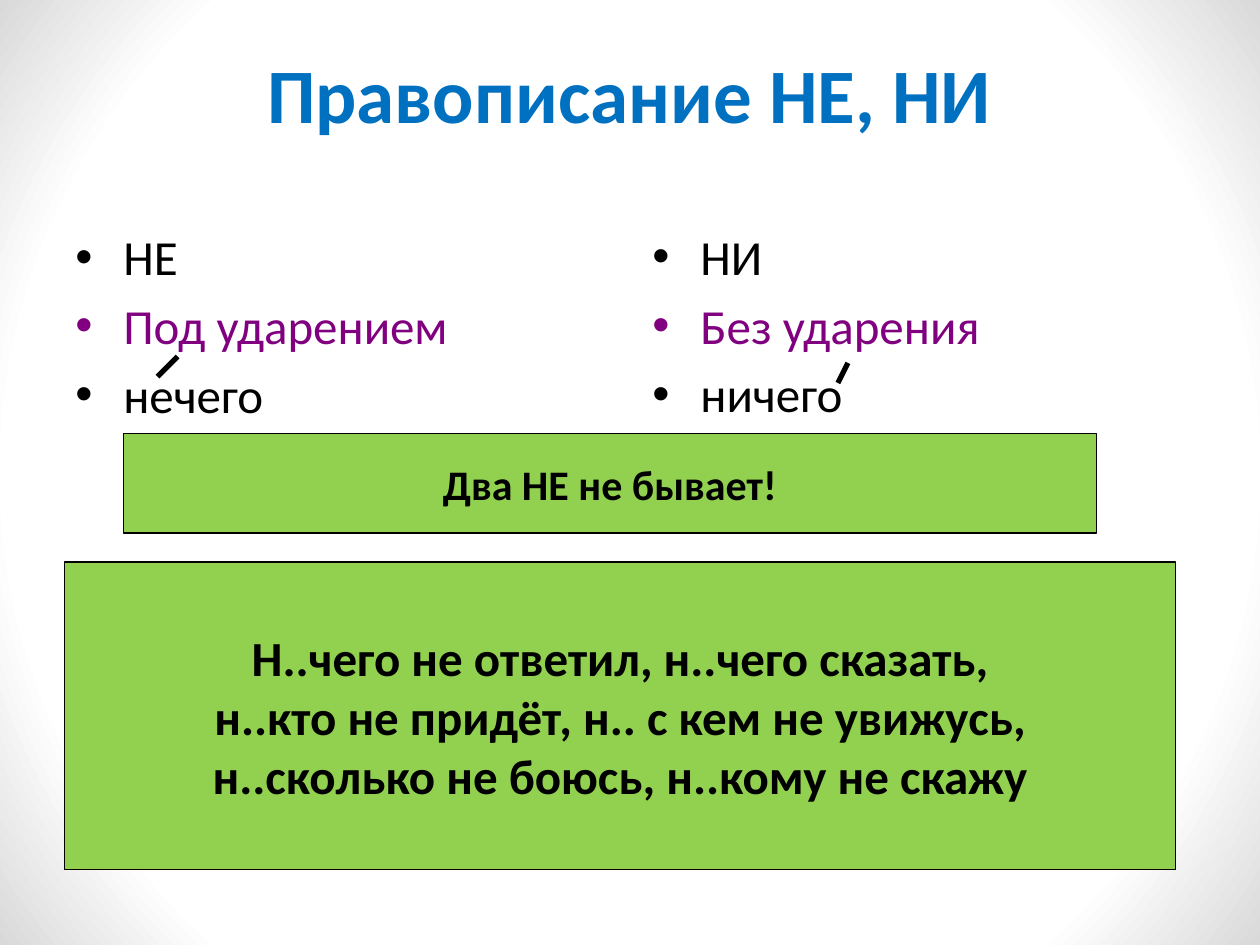
from lxml import etree
from pptx import Presentation
from pptx.dml.color import RGBColor
from pptx.enum import shapes, text
from pptx.oxml.ns import qn
from pptx.util import Inches, Pt

THEME = {
    "font": "Calibri",
    "ink": "000000", "blue": "0070C0", "plum": "800080", "green": "92D050",
    "glow": [(0.79, "FFFFFF"), (1, "D9D9D9")],
    "title": 44, "body": 28, "note": 24,
    "edge": 0.75, "stress": 3, "gap": 5.6, "indent": 0.38,
}
SIZE = (10, 7.5)
TITLE = ("Правописание НЕ, НИ", (0.5, 0.17, 9, 1.13))
LISTS = [
    (["НЕ", "Под ударением", "нечего"], (0.5, 1.75, 4.42, 4.95)),
    (["НИ", "Без ударения", "ничего"], (5.08, 1.75, 4.25, 1.76)),
]
INKS = ["ink", "plum", "ink"]
MARKS = [(1.25, 2.99, 1.41, 2.83), (6.65, 3.04, 6.73, 2.88)]
CARDS = [
    (["Два НЕ не бывает!"], "note", (0.98, 3.44, 7.72, 0.79)),
    (["Н..чего не ответил, н..чего сказать,",
      "н..кто не придёт, н.. с кем не увижусь,",
      "н..сколько не боюсь, н..кому не скажу"], "body", (0.51, 4.46, 8.82, 2.44)),
]


def tint(name):
    return RGBColor.from_string(THEME.get(name, name))


def place(box):
    return [Inches(n) for n in box]


def node(parent, tag, **attrs):
    return etree.SubElement(parent, qn(tag), attrs)


def write(frame, lines, size, inks, bold=False, bullet=False, middle=True, wrap=True):
    frame.word_wrap = wrap
    frame.vertical_anchor = text.MSO_ANCHOR.MIDDLE if middle else text.MSO_ANCHOR.TOP
    for i, (line, ink) in enumerate(zip(lines, inks)):
        para = frame.paragraphs[0] if i == 0 else frame.add_paragraph()
        para.alignment = text.PP_ALIGN.LEFT if bullet else text.PP_ALIGN.CENTER
        if bullet:
            if i:
                para.space_before = Pt(THEME["gap"])
            props = para._p.get_or_add_pPr()
            dent = Inches(THEME["indent"])
            props.set("marL", str(dent))
            props.set("indent", str(-dent))
            node(props, "a:buFont", typeface="Arial")
            node(props, "a:buChar", char="•")
        run = para.add_run()
        run.text = line
        style = {"name": THEME["font"], "size": Pt(THEME[size]), "bold": bold}
        for key, value in style.items():
            setattr(run.font, key, value)
        run.font.color.rgb = tint(ink)


def block(slide, box):
    shape = slide.shapes.add_shape(shapes.MSO_SHAPE.RECTANGLE, *place(box))
    shape.shadow.inherit = False
    return shape


def glow(slide):
    shape = block(slide, (0, 0, *SIZE))
    shape.line.fill.background()
    shape.fill.gradient()
    for stop, (spot, ink) in zip(shape.fill.gradient_stops, THEME["glow"]):
        stop.position = spot
        stop.color.rgb = tint(ink)
    grad = shape._element.spPr.find(qn("a:gradFill"))
    grad.remove(grad.find(qn("a:lin")))
    ring = node(grad, "a:path", path="circle")
    node(ring, "a:fillToRect", **dict.fromkeys("ltrb", "50000"))


def mark(slide, ends):
    line = slide.shapes.add_connector(shapes.MSO_CONNECTOR.STRAIGHT, *place(ends))
    line.line.color.rgb = tint("ink")
    line.line.width = Pt(THEME["stress"])
    node(line._element.spPr, "a:effectLst")


def card(slide, lines, size, box):
    shape = block(slide, box)
    shape.fill.solid()
    shape.fill.fore_color.rgb = tint("green")
    shape.line.color.rgb = tint("ink")
    shape.line.width = Pt(THEME["edge"])
    write(shape.text_frame, lines, size, ["ink"] * len(lines), bold=True, wrap=False)


def main():
    deck = Presentation()
    deck.slide_width, deck.slide_height = place(SIZE)
    slide = deck.slides.add_slide(deck.slide_layouts[6])
    glow(slide)
    head, box = TITLE
    frame = slide.shapes.add_textbox(*place(box)).text_frame
    write(frame, [head], "title", ["blue"], bold=True)
    for lines, box in LISTS:
        frame = slide.shapes.add_textbox(*place(box)).text_frame
        write(frame, lines, "body", INKS, bullet=True, middle=False)
    for ends in MARKS:
        mark(slide, ends)
    for lines, size, box in CARDS:
        card(slide, lines, size, box)
    deck.save("out.pptx")


if __name__ == "__main__":
    main()
